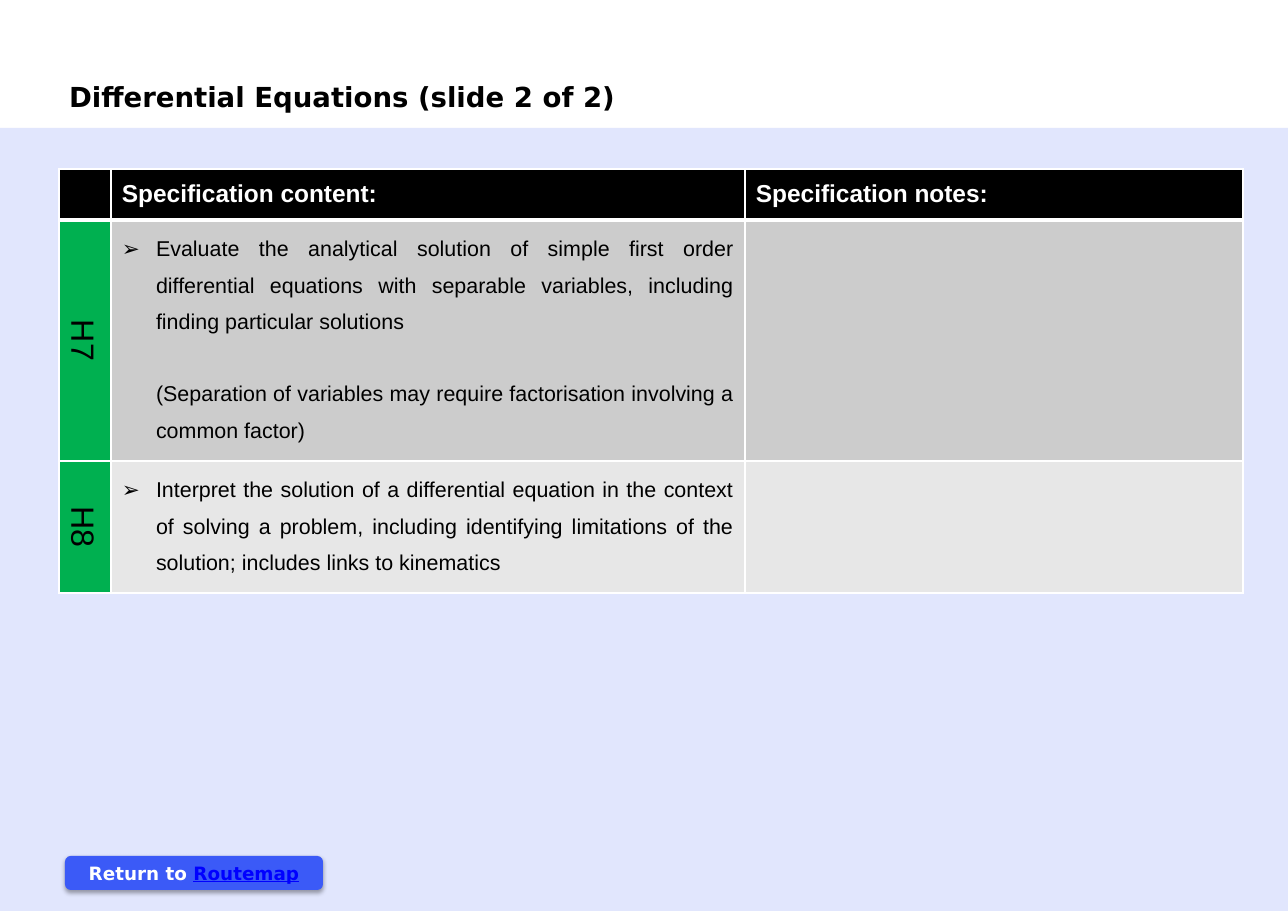
from typing import Any, NamedTuple

from lxml import etree
from pptx import Presentation, util as u
from pptx.dml import color
from pptx.enum import shapes, text
from pptx.oxml import ns

PX = 8298
BLACK, WHITE, GREEN, BLUE = "000000", "FFFFFF", "00B050", "3B5AF7"
SANS, HEAVY = "Arial", "DejaVu Sans"
INDENT = 34


class Row(NamedTuple):
    code: str
    points: list[str]
    fill: str
    high: int


HEADS = ["", "Specification content:", "Specification notes:"]
HEAD_HIGH = 51
WIDTHS = [52, 634, 498]
ROWS = [
    Row("H7", ["Evaluate the analytical solution of simple first order differential "
               "equations with separable variables, including finding particular solutions",
               "(Separation of variables may require factorisation involving a common factor)"],
        "CCCCCC", 241),
    Row("H8", ["Interpret the solution of a differential equation in the context of solving "
               "a problem, including identifying limitations of the solution; includes "
               "links to kinematics"],
        "E7E7E7", 132),
]


def px(count: int) -> u.Emu:
    return u.Emu(count * PX)


def rgb(code: str) -> color.RGBColor:
    return color.RGBColor.from_string(code)


def put(target: Any, values: dict[str, Any]) -> None:
    """Set each named value as an attribute of the target."""
    for name, value in values.items():
        setattr(target, name, value)


def add(parent: Any, tag: str, **attrs: Any) -> Any:
    """Append an XML child with the given attributes."""
    return etree.SubElement(parent, ns.qn(tag), {k: str(v) for k, v in attrs.items()})


def paint(item: Any, code: str) -> None:
    item.fill.solid()
    item.fill.fore_color.rgb = rgb(code)


def write(para: Any, words: str, size: int, code: str = BLACK, **font: Any) -> None:
    run = para.add_run()
    run.text = words
    put(run.font, {"name": SANS, "size": u.Pt(size), "bold": False} | font)
    run.font.color.rgb = rgb(code)


def block(slide: Any, kind: Any, box: tuple[int, int, int, int], code: str) -> Any:
    shape = slide.shapes.add_shape(kind, *map(px, box))
    shape.shadow.inherit = False
    paint(shape, code)
    shape.line.fill.background()
    return shape


def edge(cell: Any, top: int, base: int) -> None:
    """Draw white borders, with the top and base widths in points."""
    props = cell._tc.get_or_add_tcPr()
    for side, width in zip("LRTB", (1, 1, top, base)):
        line = add(props, f"a:ln{side}", w=u.Pt(width))
        add(add(line, "a:solidFill"), "a:srgbClr", val=WHITE)


def draw_title(slide: Any) -> None:
    title = slide.shapes.title
    put(title, {"left": px(58), "top": px(74), "width": px(627), "height": px(44)})
    put(title.text_frame, {"auto_size": text.MSO_AUTO_SIZE.NONE, "word_wrap": True,
                           "vertical_anchor": text.MSO_ANCHOR.TOP})
    para = title.text_frame.paragraphs[0]
    para.alignment = text.PP_ALIGN.LEFT
    write(para, "Differential Equations (slide 2 of 2)", 18, name=HEAVY, bold=True)


def draw_panel(slide: Any) -> None:
    panel = block(slide, shapes.MSO_SHAPE.RECTANGLE, (0, 128, 1288, 783), BLUE)
    tint = panel._element.spPr.find(ns.qn("a:solidFill"))[0]
    add(tint, "a:alpha", val=15000)


def draw_button(slide: Any) -> None:
    button = block(slide, shapes.MSO_SHAPE.ROUNDED_RECTANGLE, (65, 856, 258, 34), BLUE)
    glow = add(button._element.spPr.find(ns.qn("a:effectLst")), "a:outerShdw",
               blurRad=u.Pt(3.1), dist=u.Pt(1.8), dir=5400000, rotWithShape=0)
    add(add(glow, "a:srgbClr", val=BLACK), "a:alpha", val=35000)
    button.text_frame.vertical_anchor = text.MSO_ANCHOR.MIDDLE
    para = button.text_frame.paragraphs[0]
    para.alignment = text.PP_ALIGN.CENTER
    write(para, "Return to ", 12, WHITE, name=HEAVY, bold=True)
    write(para, "Routemap", 12, "0000FF", name=HEAVY, bold=True, underline=True)


def fill_points(frame: Any, points: list[str]) -> None:
    """Write a bulleted point, then any indented remarks one line below."""
    for index, point in enumerate(points):
        para = frame.add_paragraph() if index else frame.paragraphs[0]
        props = para._p.get_or_add_pPr()
        props.set("marL", str(px(INDENT)))
        props.set("indent", str(0 if index else -px(INDENT)))
        if index:
            add(props, "a:buNone")
        else:
            add(props, "a:buFont", typeface=SANS)
            add(props, "a:buChar", char="➢")
        put(para, {"alignment": text.PP_ALIGN.JUSTIFY, "line_spacing": 1.5,
                   "space_before": u.Pt(24 if index else 0)})
        write(para, point, 14)


def draw_table(slide: Any) -> None:
    highs = [HEAD_HIGH] + [row.high for row in ROWS]
    table = slide.shapes.add_table(len(highs), len(WIDTHS), px(59), px(169),
                                   px(sum(WIDTHS)), px(sum(highs))).table
    for column, width in zip(table.columns, WIDTHS):
        column.width = px(width)
    for line, high in zip(table.rows, highs):
        line.height = px(high)

    for index, head in enumerate(HEADS):
        cell = table.cell(0, index)
        edge(cell, 1, 3)
        paint(cell, BLACK)
        cell.vertical_anchor = text.MSO_ANCHOR.MIDDLE
        if head:
            write(cell.text_frame.paragraphs[0], head, 16, WHITE, bold=True)

    for index, row in enumerate(ROWS, 1):
        cells = [table.cell(index, column) for column in range(len(WIDTHS))]
        for cell, code in zip(cells, (GREEN, row.fill, row.fill)):
            edge(cell, 3 if index == 1 else 1, 1)
            paint(cell, code)
        cells[0]._tc.get_or_add_tcPr().set("vert", "vert")
        para = cells[0].text_frame.paragraphs[0]
        para.alignment = text.PP_ALIGN.CENTER
        write(para, row.code, 21)
        fill_points(cells[1].text_frame, row.points)


def main() -> None:
    deck = Presentation()
    put(deck, {"slide_width": px(1288), "slide_height": px(911)})
    slide = deck.slides.add_slide(deck.slide_layouts[5])
    for draw in (draw_panel, draw_button, draw_table, draw_title):
        draw(slide)
    deck.save("out.pptx")


if __name__ == "__main__":
    main()
